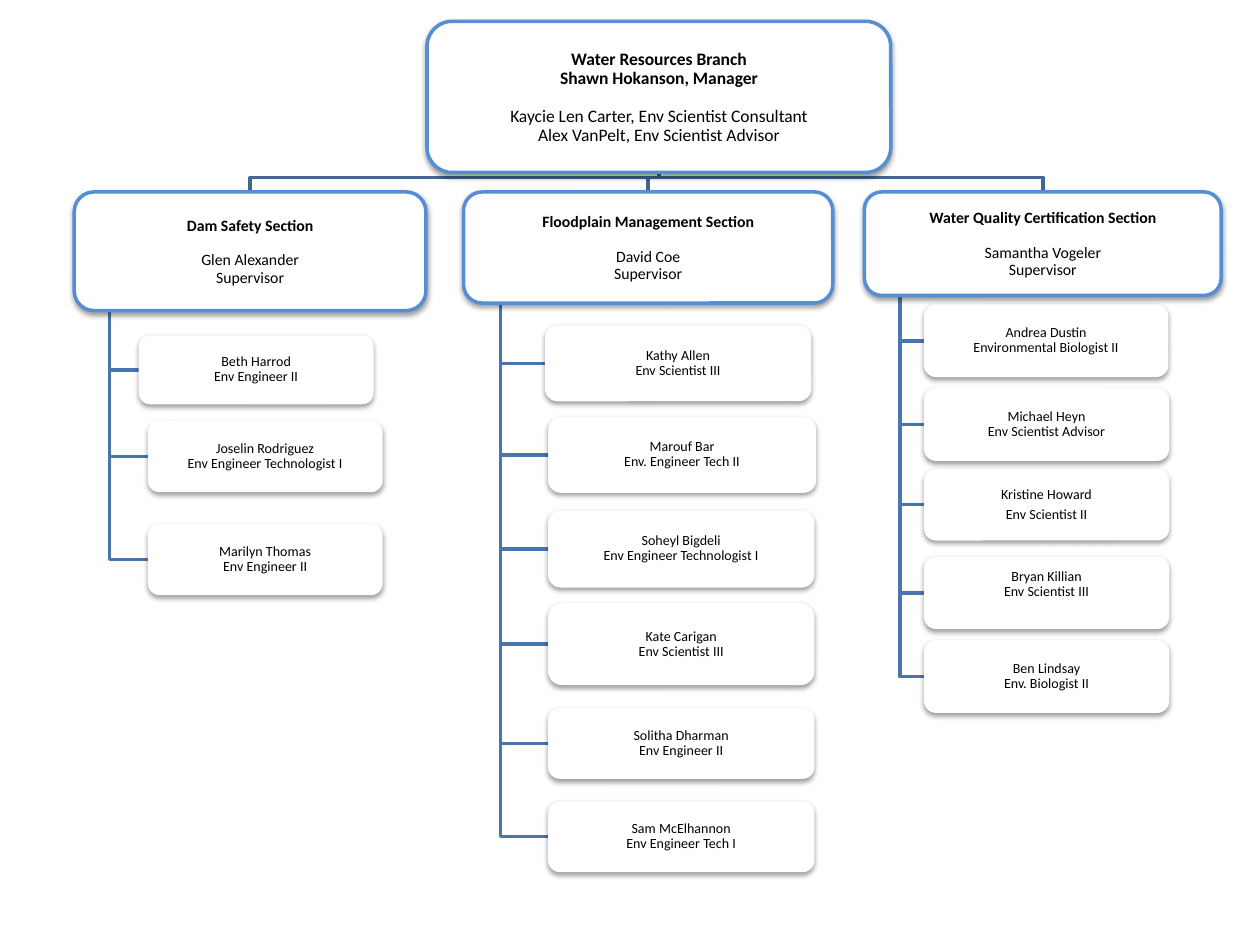
from dataclasses import dataclass

from lxml.etree import SubElement
from pptx import Presentation
from pptx.dml.color import RGBColor
from pptx.enum.shapes import MSO_SHAPE
from pptx.enum.text import MSO_ANCHOR, PP_ALIGN
from pptx.oxml.ns import qn
from pptx.util import Pt


@dataclass(frozen=True)
class Theme:
    font: str = "Calibri"
    text: RGBColor = RGBColor(0x00, 0x00, 0x00)
    fill: RGBColor = RGBColor(0xFF, 0xFF, 0xFF)
    border: RGBColor = RGBColor(0x55, 0x8E, 0xD5)
    branch_line: RGBColor = RGBColor(0x3F, 0x67, 0x97)
    staff_line: RGBColor = RGBColor(0x48, 0x75, 0xAC)
    line_width: float = 2
    manager_size: int = 10
    section_size: int = 9
    staff_size: int = 8


THEME = Theme()
BUS_Y = 101.5
SECTION_TOP = 109.7
TRUNK_SHARE = 0.1  # where the trunk leaves a section, as a share of its width

# Frames are left, top, width, height. A text block is a list of lines.
MANAGER = {
    "frame": (244, 12.2, 265, 86.4),
    "heading": ["Water Resources Branch", "Shawn Hokanson, Manager"],
    "details": ["Kaycie Len Carter, Env Scientist Consultant",
                "Alex VanPelt, Env Scientist Advisor"],
}

# Staff rows: name, role, top, height, then any exception to the section's
# left and width or to the text spacing.
SECTIONS = [
    {
        "heading": "Dam Safety Section", "supervisor": "Glen Alexander",
        "left": 42.4, "width": 201, "height": 67.8,
        "staff_left": 84.5, "staff_width": 134.2,
        "staff": [
            ("Beth Harrod", "Env Engineer II", 191.6, 39.5, {"left": 79.3}),
            ("Joselin Rodriguez", "Env Engineer Technologist I", 240.5, 40.8, {}),
            ("Marilyn Thomas", "Env Engineer II", 299.3, 40.8, {}),
        ],
    },
    {
        "heading": "Floodplain Management Section", "supervisor": "David Coe",
        "left": 264.9, "width": 211, "height": 63.5,
        "staff_left": 313.2, "staff_width": 152.2,
        "staff": [
            ("Kathy Allen", "Env Scientist III", 185.9, 43.4, {"left": 311.4}),
            ("Marouf Bar", "Env. Engineer Tech II", 238.3, 43.3, {"width": 153.2}),
            ("Soheyl Bigdeli", "Env Engineer Technologist I", 291.6, 44.2, {}),
            ("Kate Carigan", "Env Scientist III", 344.7, 46.8, {}),
            ("Solitha Dharman", "Env Engineer II", 404.6, 40.5, {}),
            ("Sam McElhannon", "Env Engineer Tech I", 457.9, 40.5, {}),
        ],
    },
    {
        "heading": "Water Quality Certification Section",
        "supervisor": "Samantha Vogeler",
        "left": 494, "width": 203.8, "height": 59.2,
        "staff_left": 528, "staff_width": 140.2,
        "staff": [
            ("Andrea Dustin", "Environmental Biologist II", 174, 41.5, {"width": 139.7}),
            ("Michael Heyn", "Env Scientist Advisor", 221.8, 41.6, {}),
            ("Kristine Howard", "Env Scientist II", 267.9, 41, {"gap": 2.8}),
            ("Bryan Killian", "Env Scientist III", 318, 41.5, {"lift": 9}),
            ("Ben Lindsay", "Env. Biologist II", 365.8, 41.6, {}),
        ],
    },
]


def add_soft_shadow(shape):
    shape.shadow.inherit = False
    effects = shape._element.spPr.find(qn("a:effectLst"))
    shadow = SubElement(effects, qn("a:outerShdw"), blurRad=str(Pt(3.1)),
                        dist=str(Pt(1.6)), dir="5400000", rotWithShape="0")
    color = SubElement(shadow, qn("a:srgbClr"), val="000000")
    SubElement(color, qn("a:alpha"), val="38000")


def add_box(slide, frame, heading, details, size, gap=0, lift=0):
    """Add a rounded box; gap parts heading from details, lift raises the text.

    Only boxes with a heading get a border.
    """
    box = slide.shapes.add_shape(MSO_SHAPE.ROUNDED_RECTANGLE, *map(Pt, frame))
    box.fill.solid()
    box.fill.fore_color.rgb = THEME.fill
    if heading:
        box.line.color.rgb = THEME.border
        box.line.width = Pt(THEME.line_width)
    else:
        box.line.fill.background()
    add_soft_shadow(box)

    text = box.text_frame
    text.word_wrap = True
    text.vertical_anchor = MSO_ANCHOR.MIDDLE
    text.margin_left = text.margin_right = Pt(2)
    text.margin_top, text.margin_bottom = Pt(1 if heading else 0), Pt(lift)
    text.text = "\n".join(heading + details)
    gap_index = len(heading) or 1
    for index, para in enumerate(text.paragraphs):
        para.alignment = PP_ALIGN.CENTER
        para.line_spacing = 0.9
        para.space_before = Pt(gap if index == gap_index else 0)
        para.font.name = THEME.font
        para.font.size = Pt(size)
        para.font.bold = index < len(heading)
        para.font.color.rgb = THEME.text
    return box


def add_elbow(slide, points, color):
    """Add an open, right-angled line through the points, behind the boxes."""
    start, *rest = [(Pt(x), Pt(y)) for x, y in points]
    builder = slide.shapes.build_freeform(*start)
    builder.add_line_segments(rest, close=False)
    elbow = builder.convert_to_shape()
    elbow.fill.background()
    elbow.line.color.rgb = color
    elbow.line.width = Pt(THEME.line_width)
    elbow.shadow.inherit = False
    slide.shapes._spTree.insert(2, elbow._element)


def add_section(slide, section, stem):
    """Add a section with its staff, hung from the stem point."""
    left, width = section["left"], section["width"]
    bottom = SECTION_TOP + section["height"]
    add_box(slide, (left, SECTION_TOP, width, section["height"]),
            [section["heading"]], [section["supervisor"], "Supervisor"],
            THEME.section_size, gap=10)
    center = left + width / 2
    add_elbow(slide, [stem, (stem[0], BUS_Y), (center, BUS_Y), (center, SECTION_TOP)],
              THEME.branch_line)

    trunk_x = left + width * TRUNK_SHARE
    for name, role, top, height, exception in section["staff"]:
        staff_left = exception.get("left", section["staff_left"])
        staff_width = exception.get("width", section["staff_width"])
        add_box(slide, (staff_left, top, staff_width, height), [], [name, role],
                THEME.staff_size, exception.get("gap", 0), exception.get("lift", 0))
        middle = top + height / 2
        add_elbow(slide, [(trunk_x, bottom), (trunk_x, middle), (staff_left, middle)],
                  THEME.staff_line)


def main():
    deck = Presentation()
    deck.slide_width, deck.slide_height = Pt(720), Pt(540)
    slide = deck.slides.add_slide(deck.slide_layouts[6])

    left, top, width, height = MANAGER["frame"]
    add_box(slide, MANAGER["frame"], MANAGER["heading"], MANAGER["details"],
            THEME.manager_size, gap=11)
    for section in SECTIONS:
        add_section(slide, section, (left + width / 2, top + height))
    deck.save("out.pptx")


if __name__ == "__main__":
    main()
